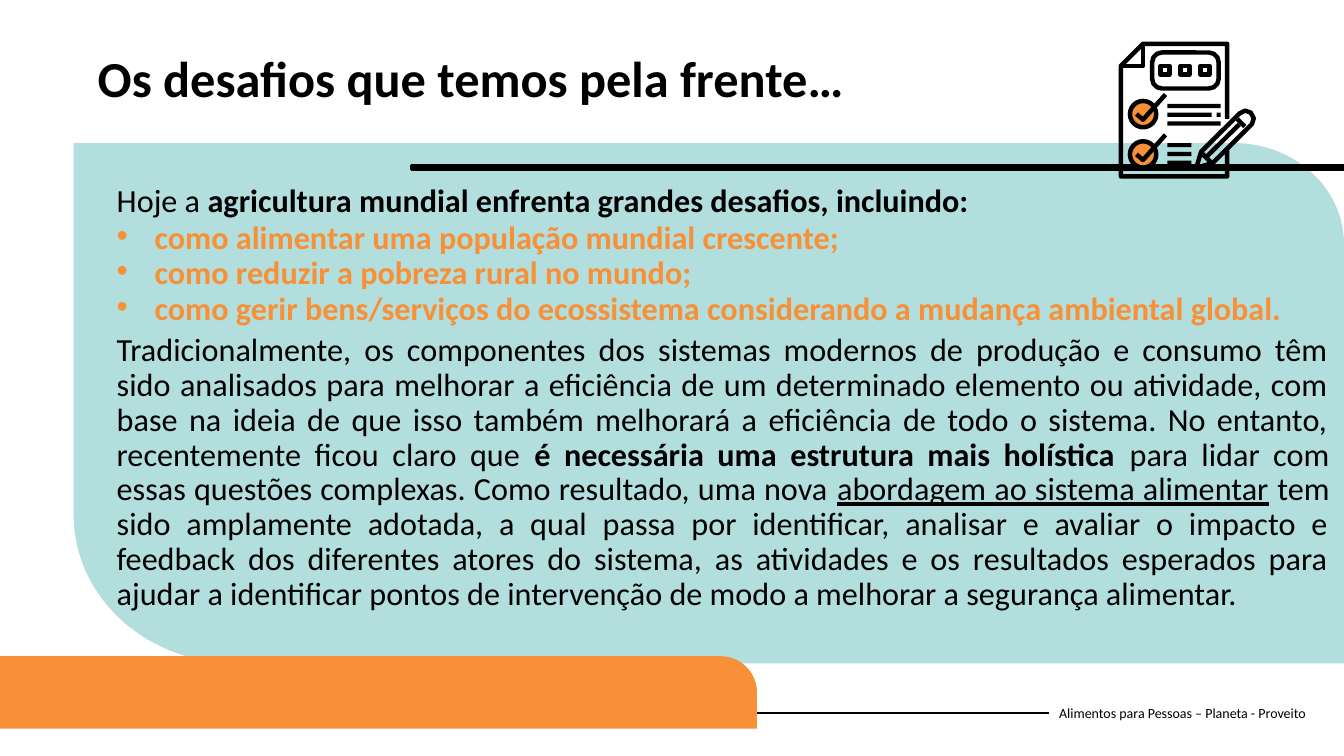
from dataclasses import dataclass
from math import cos, radians, sin

from lxml.etree import SubElement
from pptx import Presentation
from pptx.dml.color import RGBColor
from pptx.enum.shapes import MSO_CONNECTOR as Connector, MSO_SHAPE as Preset
from pptx.enum.text import MSO_ANCHOR as Anchor, MSO_AUTO_SIZE as AutoSize, PP_ALIGN as Align
from pptx.oxml.ns import qn
from pptx.util import Pt

COLORS = {"ink": "000000", "panel": "B2DEDD", "accent": "F79037"}
FONT = "Calibri"
STROKE = 3.2
Point = tuple[float, float]


@dataclass
class Span:
    text: str
    bold: bool = False
    underline: bool = False


@dataclass
class Para:
    spans: list[Span]
    color: str = "ink"
    spacing: float = 0.9
    bullet: bool = False
    align: Align = Align.LEFT


@dataclass
class Block:
    left: float
    top: float
    width: float
    height: float
    fill: str | None = "ink"
    stroke: float = 0
    preset: Preset = Preset.RECTANGLE
    rounding: float | None = None


@dataclass
class Outline:
    points: list[Point]
    closed: bool = False
    fill: str | None = None
    stroke: float = STROKE


BODY = [
    Para([Span("Hoje a"), Span(" agricultura mundial enfrenta grandes desafios, incluindo:", bold=True)]),
    *(Para([Span(challenge, bold=True)], "accent", 0.7, True) for challenge in (
        "como alimentar uma população mundial crescente;",
        "como reduzir a pobreza rural no mundo;",
        "como gerir bens/serviços do ecossistema considerando a mudança ambiental global.",
    )),
    Para([
        Span("Tradicionalmente, os componentes dos sistemas modernos de produção e consumo têm sido "
             "analisados para melhorar a eficiência de um determinado elemento ou atividade, com base na "
             "ideia de que isso também melhorará a eficiência de todo o sistema. No entanto, recentemente "
             "ficou claro que "),
        Span("é necessária uma estrutura mais holística ", bold=True),
        Span("para lidar com essas questões complexas. Como resultado, uma nova "),
        Span("abordagem ao sistema alimentar", underline=True),
        Span(" tem sido amplamente adotada, a qual passa por identificar, analisar e avaliar o impacto e "
             "feedback dos diferentes atores do sistema, as atividades e os resultados esperados para "
             "ajudar a identificar pontos de intervenção de modo a melhorar a segurança alimentar."),
    ], align=Align.JUSTIFY),
]


def rgb(name: str) -> RGBColor:
    """Return a palette colour."""
    return RGBColor.from_string(COLORS[name])


def style_shape(shape, fill: str | None, stroke: float) -> None:
    """Apply fill and black outline without a shadow."""
    shape.shadow.inherit = False
    if fill:
        shape.fill.solid()
        shape.fill.fore_color.rgb = rgb(fill)
    else:
        shape.fill.background()
    if stroke:
        shape.line.color.rgb = rgb("ink")
        shape.line.width = Pt(stroke)
    else:
        shape.line.fill.background()


def draw_block(page, block: Block) -> None:
    """Draw a preset shape."""
    shape = page.shapes.add_shape(
        block.preset, Pt(block.left), Pt(block.top), Pt(block.width), Pt(block.height))
    if block.rounding is not None:
        shape.adjustments[0] = block.rounding
    style_shape(shape, block.fill, block.stroke)


def draw_outline(page, outline: Outline) -> None:
    """Draw a freeform through the given points."""
    start, *rest = [(Pt(x), Pt(y)) for x, y in outline.points]
    builder = page.shapes.build_freeform(*start)
    builder.add_line_segments(rest, close=outline.closed)
    style_shape(builder.convert_to_shape(), outline.fill, outline.stroke)


def draw_line(page, start: Point, end: Point, width: float):
    """Draw a straight black connector."""
    line = page.shapes.add_connector(Connector.STRAIGHT, *(Pt(v) for v in (*start, *end)))
    line.line.color.rgb = rgb("ink")
    line.line.width = Pt(width)
    SubElement(line._element.spPr, qn("a:effectLst"))
    return line


def arc(center: Point, radius: Point, first: int) -> list[Point]:
    """Return points of a quarter ellipse starting at an angle in degrees."""
    angles = [radians(first + step) for step in range(0, 91, 3)]
    return [(center[0] + radius[0] * cos(a), center[1] + radius[1] * sin(a)) for a in angles]


def place_text(box, left: float, top: float, width: float, height: float, anchor: Anchor) -> None:
    """Position a text shape and set its frame."""
    box.left, box.top, box.width, box.height = Pt(left), Pt(top), Pt(width), Pt(height)
    box.text_frame.word_wrap = True
    box.text_frame.auto_size = AutoSize.NONE
    box.text_frame.vertical_anchor = anchor


def write_paras(box, paras: list[Para], size: float) -> None:
    """Fill a text shape with formatted paragraphs."""
    frame = box.text_frame
    for index, item in enumerate(paras):
        para = frame.add_paragraph() if index else frame.paragraphs[0]
        para.alignment = item.align
        para.line_spacing = item.spacing
        para.space_before = Pt(6 if index else 0)
        if item.bullet:
            props = para._p.get_or_add_pPr()
            props.set("marL", str(Pt(27)))
            props.set("indent", str(-Pt(27)))
            SubElement(props, qn("a:buFont"), typeface="Arial")
            SubElement(props, qn("a:buChar"), char="•")
        for span in item.spans:
            run = para.add_run()
            run.text = span.text
            run.font.name, run.font.size = FONT, Pt(size)
            run.font.bold, run.font.underline = span.bold, span.underline
            run.font.color.rgb = rgb(item.color)


def draw_checklist(page) -> None:
    """Draw the checklist icon with its pencil."""
    draw_outline(page, Outline([(876.6, 85), (876.6, 31.3), (816.5, 31.3), (800.7, 47),
                                (800.7, 126), (876.6, 126), (876.6, 107.5)]))
    draw_outline(page, Outline([(816.5, 31.3), (816.5, 47), (800.7, 47)]))
    draw_block(page, Block(823, 37.5, 47.5, 25.7, None, STROKE, Preset.ROUNDED_RECTANGLE, 0.27))
    for column in range(3):
        draw_block(page, Block(829 + 14.3 * column, 47, 6.3, 6.3, None, STROKE))
    for x, y in ((816.5, 81.5), (816.5, 110.3)):
        draw_block(page, Block(x - 9.4, y - 9.4, 18.8, 18.8, "accent", STROKE, Preset.OVAL))
        draw_outline(page, Outline([(x - 4.7, y), (x, y + 4), (x + 16, y - 14)]))
    for top, widths in ((74.2, (38.2, 31.7, 38.2)), (102.2, (17.3,) * 3)):
        for row, width in enumerate(widths):
            draw_block(page, Block(833.8, top + 6.3 * row, width, 3))
    draw_block(page, Block(869, 80.5, 3, 3))
    draw_outline(page, Outline([(854.6, 119.9), (858, 108.4), (885.5, 81), (889.5, 79), (893.5, 80.5),
                                (895.6, 84.5), (894.3, 88.6), (866.5, 116.3)], closed=True))
    for start, end in (((862.2, 111.6), (885.2, 88.9)), ((883.8, 85), (889.2, 90.4)),
                       ((858, 109), (866, 117))):
        draw_line(page, start, end, STROKE)


def main() -> None:
    """Build and save the slide."""
    deck = Presentation()
    deck.slide_width, deck.slide_height = Pt(960), Pt(540)
    page = deck.slides.add_slide(deck.slide_layouts[5])

    title = page.shapes.title
    place_text(title, 62.6, 35.3, 834.5, 63.4, Anchor.TOP)
    write_paras(title, [Para([Span("Os desafios que temos pela frente…", bold=True)])], 36)

    footer = page.shapes.add_textbox(0, 0, 0, 0)
    place_text(footer, 749.5, 494.6, 196.6, 28.8, Anchor.MIDDLE)
    write_paras(footer, [Para([Span("Alimentos para Pessoas – Planeta - Proveito")], spacing=1.0)], 10)
    draw_line(page, (0, 509), (749.5, 509), 1.5).end_connect(footer, 1)

    panel = [(52.6, 102.2), *arc((881.3, 174.2), (78.7, 72), 270), (960, 473.8),
             *arc((168.5, 367.9), (115.9, 105.9), 90)]
    draw_outline(page, Outline(panel, True, "panel", 0))
    draw_block(page, Block(0, 468.7, 540.7, 51.8, "accent", 0, Preset.ROUND_1_RECTANGLE, 0.5))
    draw_block(page, Block(293.8, 118.1, 666.2, 2.9, stroke=1.93))

    body = page.shapes.add_textbox(0, 0, 0, 0)
    place_text(body, 76.3, 128.2, 880.6, 287.3, Anchor.TOP)
    write_paras(body, BODY, 23)
    draw_checklist(page)
    deck.save("out.pptx")


if __name__ == "__main__":
    main()
